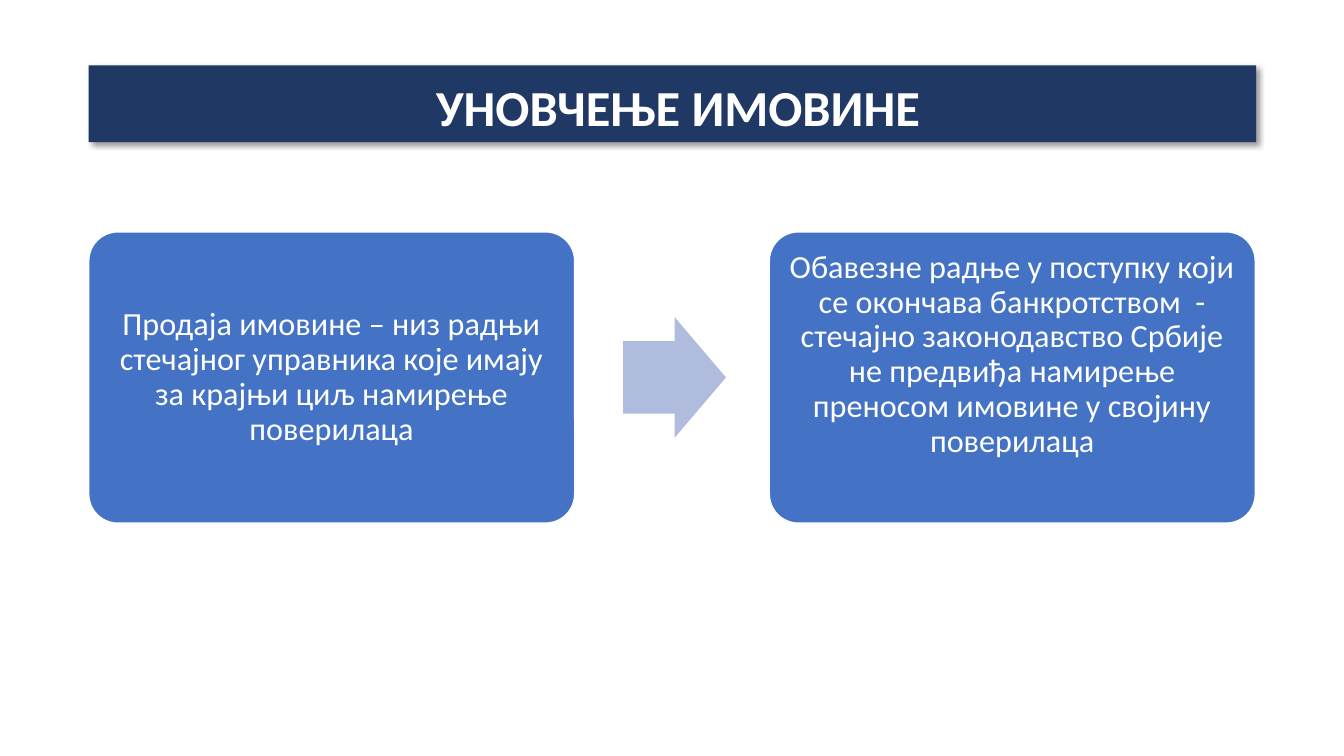
from lxml import etree
from pptx import Presentation
from pptx.dml.color import RGBColor
from pptx.enum.shapes import MSO_SHAPE as SHAPE
from pptx.enum.text import MSO_ANCHOR as ANCHOR, PP_ALIGN as ALIGN
from pptx.oxml.ns import qn
from pptx.util import Inches, Pt

COLORS = {"navy": "203864", "blue": "4472C4", "pale": "B0BCDE",
          "white": "FFFFFF", "black": "000000"}
LEFT, BOX_W, BOX_H, BOX_TOP = 0.88, 4.82, 2.89, 2.3
BOX_STEP = 6.75
ARROW_W, ARROW_H = 1.02, 1.2


def rgb(name):
    return RGBColor.from_string(COLORS[name])


class SlideBuilder:
    font = "Calibri"

    def __init__(self, prs):
        self.s = prs.slides.add_slide(prs.slide_layouts[6])

    def shape(self, kind, x, y, w, h, fill, line=None):
        sp = self.s.shapes.add_shape(kind, Inches(x), Inches(y), Inches(w), Inches(h))
        sp.shadow.inherit = False
        sp.fill.solid()
        sp.fill.fore_color.rgb = rgb(fill)
        if line:
            sp.line.color.rgb = rgb(line)
            sp.line.width = Pt(1)
        else:
            sp.line.fill.background()
        return sp

    def text(self, sp, text, size, anchor, bold=False):
        tf = sp.text_frame
        tf.word_wrap = True
        tf.vertical_anchor = anchor
        tf.text = text
        p = tf.paragraphs[0]
        p.alignment = ALIGN.CENTER
        p.line_spacing = 0.9
        for r in p.runs:
            r.font.name = self.font
            r.font.size = Pt(size)
            r.font.bold = bold
            r.font.color.rgb = rgb("white")

    def drop_shadow(self, sp):
        effects = sp._element.spPr.find(qn("a:effectLst"))
        shadow = etree.SubElement(effects, qn("a:outerShdw"), blurRad=str(Pt(4)),
                                  dist=str(Pt(3)), dir="2700000", algn="tl",
                                  rotWithShape="0")
        color = etree.SubElement(shadow, qn("a:srgbClr"), val=COLORS["black"])
        etree.SubElement(color, qn("a:alpha"), val="40000")

    def title(self, text):
        sp = self.shape(SHAPE.RECTANGLE, LEFT, 0.65, 11.58, 0.76, "navy")
        self.drop_shadow(sp)
        self.text(sp, text, 36, ANCHOR.BOTTOM, bold=True)

    def box(self, x, text, anchor):
        sp = self.shape(SHAPE.ROUNDED_RECTANGLE, x, BOX_TOP, BOX_W, BOX_H, "blue", "white")
        sp.adjustments[0] = 0.1
        tf = sp.text_frame
        tf.margin_left = tf.margin_right = tf.margin_top = tf.margin_bottom = Inches(0.1)
        self.text(sp, text, 23, anchor)

    def arrow(self, x):
        y = BOX_TOP + (BOX_H - ARROW_H) / 2
        sp = self.shape(SHAPE.RIGHT_ARROW, x, y, ARROW_W, ARROW_H, "pale")
        sp.adjustments[0] = 0.6
        sp.adjustments[1] = 0.5


def main():
    prs = Presentation()
    prs.slide_width, prs.slide_height = Inches(13.33), Inches(7.5)
    b = SlideBuilder(prs)
    b.title(" УНОВЧЕЊЕ ИМОВИНЕ")
    b.box(LEFT, "Продаја имовине – низ радњи стечајног управника које имају "
          "за крајњи циљ намирење поверилаца", ANCHOR.MIDDLE)
    b.arrow(6.18)
    b.box(LEFT + BOX_STEP, "Обавезне радње у поступку који се окончава банкротством  - "
          "стечајно законодавство Србије не предвиђа намирење преносом имовине "
          "у својину поверилаца", ANCHOR.TOP)
    prs.save("out.pptx")


if __name__ == "__main__":
    main()
